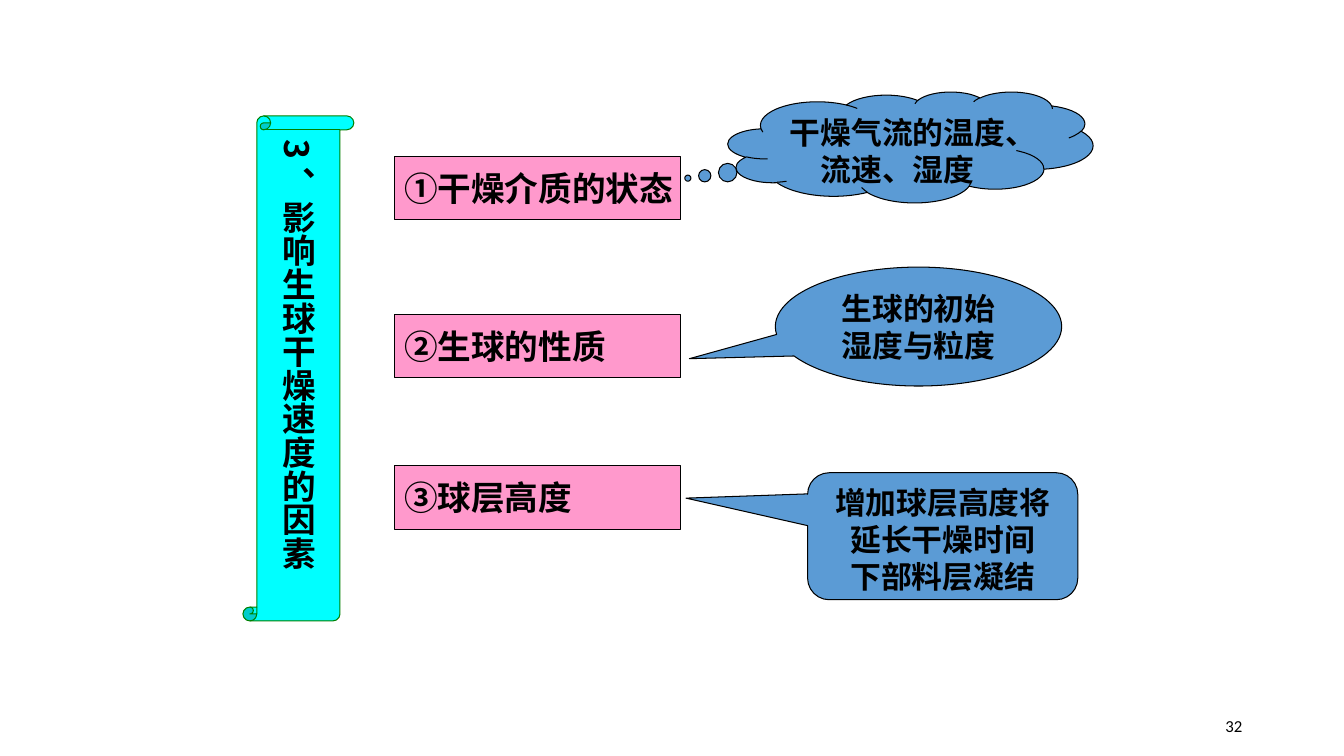
from dataclasses import dataclass

from lxml import etree
from pptx import Presentation
from pptx.dml.color import RGBColor
from pptx.enum.shapes import MSO_SHAPE
from pptx.enum.text import MSO_ANCHOR, PP_ALIGN
from pptx.oxml.ns import qn
from pptx.util import Inches, Pt

LEFT, CENTER, RIGHT, JUSTIFY = PP_ALIGN.LEFT, PP_ALIGN.CENTER, PP_ALIGN.RIGHT, PP_ALIGN.JUSTIFY
TOP, MIDDLE, BOTTOM = MSO_ANCHOR.TOP, MSO_ANCHOR.MIDDLE, MSO_ANCHOR.BOTTOM
PROCESS, SCROLL = MSO_SHAPE.FLOWCHART_PROCESS, MSO_SHAPE.VERTICAL_SCROLL
CLOUD = MSO_SHAPE.CLOUD_CALLOUT
OVAL = MSO_SHAPE.OVAL_CALLOUT
ROUNDED = MSO_SHAPE.ROUNDED_RECTANGULAR_CALLOUT


@dataclass(frozen=True)
class Theme:
    ink: str = "000000"
    factor_fill: str = "FF99CC"
    scroll_fill: str = "00FFFF"
    scroll_line: str = "008000"
    note_fill: str = "5B9BD5"
    latin: str = "Arial"
    chinese: str = "Noto Sans CJK SC"
    number_font: str = "Calibri"
    heading_size: int = 24
    note_size: int = 22
    number_size: int = 12
    line_width: float = 0.75


THEME = Theme()

# Factor: label, alignment, top; its note: shape, lines, box, pointer adjustments
FACTOR_LEFT, FACTOR_WIDTH, FACTOR_HEIGHT = 3.91, 2.84, 0.63
FACTORS = [
    ("①干燥介质的状态", LEFT, 1.55,
     CLOUD, ["干燥气流的温度、流速、湿度"], (7.22, 0.91, 3.62, 1.1), (-0.61, 0.28)),
    ("②生球的性质", JUSTIFY, 3.12,
     OVAL, ["生球的初始湿度与粒度"], (7.69, 2.65, 2.84, 1.18), (-0.8, 0.27)),
    ("③球层高度", JUSTIFY, 4.62,
     ROUNDED, ["增加球层高度将延长干燥时间", "下部料层凝结"],
     (8.01, 4.69, 2.68, 1.26), (-0.95, -0.3, 0.17)),
]


def write(frame, lines, size, align, anchor, font, bold=True, wrap=True):
    frame.word_wrap = wrap
    frame.vertical_anchor = anchor
    for index, line in enumerate(lines):
        paragraph = frame.paragraphs[0] if index == 0 else frame.add_paragraph()
        paragraph.alignment = align
        run = paragraph.add_run()
        run.text = line
        paragraph.font.name = font
        paragraph.font.size = Pt(size)
        paragraph.font.bold = bold
        paragraph.font.color.rgb = RGBColor.from_string(THEME.ink)
        # East Asian typeface
        east_asian = etree.SubElement(run.font._element, qn("a:ea"))
        east_asian.set("typeface", THEME.chinese)


def add_panel(slide, preset, box, fill, line, adjustments=()):
    panel = slide.shapes.add_shape(preset, *map(Inches, box))
    panel.shadow.inherit = False
    panel.fill.solid()
    panel.fill.fore_color.rgb = RGBColor.from_string(fill)
    panel.line.color.rgb = RGBColor.from_string(line)
    panel.line.width = Pt(THEME.line_width)
    for index, value in enumerate(adjustments):
        panel.adjustments[index] = value
    return panel


def add_title_scroll(slide, box):
    scroll = add_panel(slide, SCROLL, box, THEME.scroll_fill, THEME.scroll_line)
    frame = scroll.text_frame
    write(frame, ["3 、影响生球干燥速度的因素"], THEME.heading_size,
          CENTER, MIDDLE, THEME.chinese, wrap=False)
    frame.margin_bottom = Inches(0.2)
    frame._txBody.bodyPr.set("vert", "eaVert")


def add_factor(slide, box, label, align):
    factor = add_panel(slide, PROCESS, box, THEME.factor_fill, THEME.ink)
    write(factor.text_frame, [label], THEME.heading_size, align, MIDDLE, THEME.latin, wrap=False)


def add_note(slide, box, preset, lines, pointer):
    note = add_panel(slide, preset, box, THEME.note_fill, THEME.ink, pointer)
    write(note.text_frame, lines, THEME.note_size, CENTER, TOP, THEME.latin)


def add_slide_number(slide, box, number):
    corner = slide.shapes.add_textbox(*map(Inches, box))
    write(corner.text_frame, [number], THEME.number_size, RIGHT, BOTTOM,
          THEME.number_font, bold=False)


def main():
    deck = Presentation()
    deck.slide_width, deck.slide_height = Inches(13.33), Inches(7.5)
    slide = deck.slides.add_slide(deck.slide_layouts[6])

    add_slide_number(slide, (9.42, 6.95, 3, 0.4), "32")
    add_title_scroll(slide, (2.41, 1.15, 1.1, 5.01))
    for label, align, top, preset, lines, note_box, pointer in FACTORS:
        add_factor(slide, (FACTOR_LEFT, top, FACTOR_WIDTH, FACTOR_HEIGHT), label, align)
        add_note(slide, note_box, preset, lines, pointer)

    deck.save("out.pptx")


if __name__ == "__main__":
    main()
